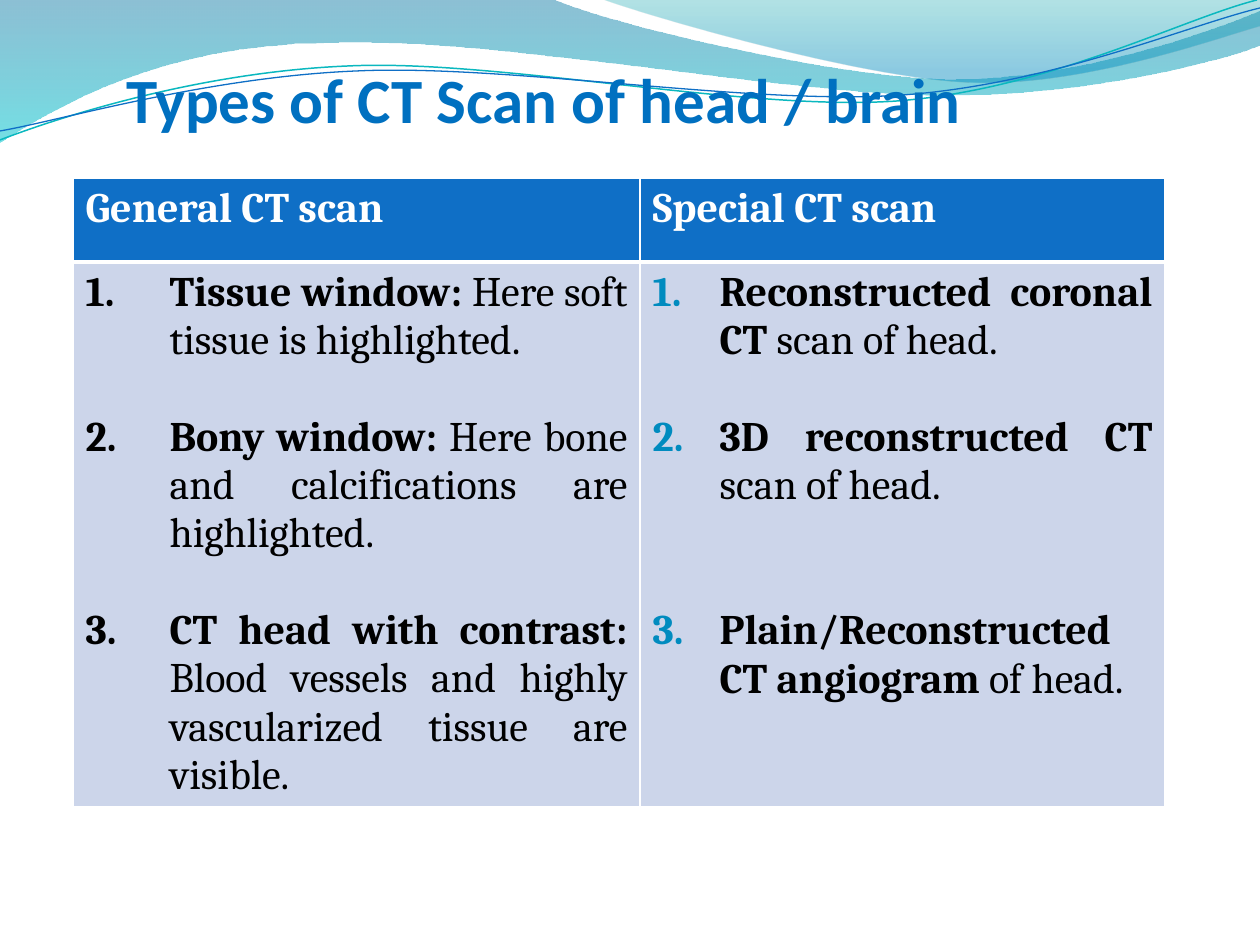
import pptx
import pptx.util
import pptx.dml.color
import pptx.enum.text
import pptx.oxml
import pptx.oxml.ns

SCALE = 914400 / 126
BODY_FONT = "Cambria"
LINE_GAP = 27.7


def px(length):
    return pptx.util.Emu(round(length * SCALE))


def colour(value):
    return pptx.dml.color.RGBColor.from_string(value)


def element(markup):
    tag, rest = (markup + " ").split(" ", 1)
    space = pptx.oxml.ns.nsdecls("a")
    return pptx.oxml.parse_xml(f"<a:{tag} {space} {rest}/>")


def add_text(para, text, size=24, font=BODY_FONT, fill="000000", bold=False):
    span = para.add_run()
    span.text = text
    span.font.size = pptx.util.Pt(size)
    span.font.name = font
    span.font.bold = bold
    span.font.color.rgb = colour(fill)


class SlideBuilder:
    accent = "0F6FC6"
    title_colour = "0070C0"
    cell_colour = "CCD5EA"
    border_colour = "FFFFFF"

    def __init__(self, deck):
        self.page = deck.slides.add_slide(deck.slide_layouts[5])

    def outline(self, start, steps, close):
        points = [step[i:i + 2] for step in steps for i in range(0, len(step), 2)]
        builder = self.page.shapes.build_freeform(*map(px, start), scale=1.0)
        builder.add_line_segments([(px(x), px(y)) for x, y in points], close=close)
        shape = builder.convert_to_shape()
        shape.shadow.inherit = False
        segments = iter(list(shape.element.spPr.iter(pptx.oxml.ns.qn("a:lnTo"))))
        for step in steps:
            parts = [next(segments) for _ in range(len(step) // 2)]
            if len(parts) == 3:
                bend = element("cubicBezTo")
                parts[0].addprevious(bend)
                for part in parts:
                    bend.append(part[0])
                    part.getparent().remove(part)
        return shape

    def wave(self, start, steps, stops):
        shape = self.outline(start, steps, True)
        shape.line.fill.background()
        shape.fill.gradient()
        shape.fill.gradient_angle = 270
        for stop, (position, value, _) in zip(shape.fill.gradient_stops, stops):
            stop.position = position
            stop.color.rgb = colour(value)
        tints = shape.element.spPr.iter(pptx.oxml.ns.qn("a:srgbClr"))
        for tint, (_, _, opacity) in zip(tints, stops):
            tint.append(element(f'alpha val="{opacity * 1000}"'))

    def curve(self, start, steps, value, width):
        shape = self.outline(start, steps, False)
        shape.fill.background()
        shape.line.color.rgb = colour(value)
        shape.line.width = pptx.util.Pt(width)

    def title(self, text, left, top, width, height):
        box = self.page.shapes.title
        self.page.shapes.element.append(box.element)
        box.left, box.top, box.width, box.height = map(px, (left, top, width, height))
        frame = box.text_frame
        frame.word_wrap = True
        frame.auto_size = pptx.enum.text.MSO_AUTO_SIZE.NONE
        frame.vertical_anchor = pptx.enum.text.MSO_ANCHOR.BOTTOM
        frame.margin_left = frame.margin_right = frame.margin_bottom = 0
        frame.margin_top = px(6)
        para = frame.paragraphs[0]
        para.alignment = pptx.enum.text.PP_ALIGN.LEFT
        add_text(para, text, size=36, font="Calibri", fill=self.title_colour, bold=True)

    def style_cell(self, cell, fill, **widths):
        cell.fill.solid()
        cell.fill.fore_color.rgb = colour(fill)
        properties = cell._tc.get_or_add_tcPr()
        for index, side in enumerate("LRTB"):
            width = pptx.util.Pt(widths.get(side, 1))
            border = element(f'ln{side} w="{width}"')
            paint = element("solidFill")
            paint.append(element(f'srgbClr val="{self.border_colour}"'))
            border.append(paint)
            properties.insert(index, border)

    def numbered_list(self, frame, items, indent, number_colour):
        for index, (lead, rest, gap_lines) in enumerate(items):
            para = frame.add_paragraph() if index else frame.paragraphs[0]
            para.alignment = pptx.enum.text.PP_ALIGN.JUSTIFY
            if gap_lines:
                para.space_before = pptx.util.Pt(gap_lines * LINE_GAP)
            properties = para._p.get_or_add_pPr()
            properties.set("marL", str(px(indent)))
            properties.set("indent", str(px(-indent)))
            if number_colour:
                paint = element("buClr")
                paint.append(element(f'srgbClr val="{number_colour}"'))
                properties.append(paint)
            properties.append(element('buFont typeface="+mj-lt"'))
            properties.append(element('buAutoNum type="arabicPeriod"'))
            add_text(para, lead, bold=True)
            add_text(para, rest)

    def table(self, left, top, height, row_heights, columns):
        width = sum(column["width"] for column in columns)
        holder = self.page.shapes.add_table(
            2, len(columns), *map(px, (left, top, width, height)))
        table = holder.table
        table.horz_banding = False
        for row, row_height in zip(table.rows, row_heights):
            row.height = px(row_height)
        for index, column in enumerate(columns):
            table.columns[index].width = px(column["width"])
            header, body = table.cell(0, index), table.cell(1, index)
            self.style_cell(header, self.accent, B=3)
            self.style_cell(body, self.cell_colour, T=3)
            add_text(header.text_frame.paragraphs[0], column["heading"],
                     fill="FFFFFF", bold=True)
            self.numbered_list(body.text_frame, column["items"],
                               column["indent"], column["number_colour"])
        holder.height = px(height)


def main():
    deck = pptx.Presentation()
    deck.slide_width, deck.slide_height = px(1260), px(945)
    slide = SlideBuilder(deck)
    slide.wave((0, 0), [
        (554, 0), (600, 21, 837, 79, 955, 79), (1075, 79, 1207, 33, 1260, 11),
        (1260, 45), (1239, 55, 1096, 96, 940, 95), (784, 95, 481, 35, 324, 43),
        (163, 45, 58, 105, 0, 142), (0, 0),
    ], [(0, "0074A1", 45), (1, "00C6CF", 55)])
    slide.wave((604, 0), [
        (641, 14, 859, 78, 969, 82), (1079, 87, 1211, 40, 1260, 26), (1260, 0),
        (604, 0),
    ], [(0, "00A1A9", 30), (0.8, "008BBF", 45)])
    slide.curve((0, 140), [
        (60, 117, 199, 72, 349, 66), (498, 59, 747, 112, 898, 101),
        (1050, 89, 1182, 19, 1257, 0),
    ], "0AB8BF", 0.85)
    slide.curve((0, 131), [
        (59, 121, 207, 77, 357, 71), (508, 64, 752, 106, 903, 95),
        (1053, 84, 1186, 26, 1260, 8),
    ], slide.accent, 0.75)
    slide.title("Types of CT Scan of head / brain", 126, 38, 924, 98)
    general = [
        ("Tissue window: ", "Here soft tissue is highlighted.", 0),
        ("Bony window: ", "Here bone and calcifications are highlighted.", 1),
        ("CT head with contrast: ",
         "Blood vessels and highly vascularized tissue are visible.", 1),
    ]
    special = [
        ("Reconstructed coronal CT ", "scan of head.", 0),
        ("3D reconstructed CT ", "scan of head.", 1),
        ("Plain/Reconstructed CT angiogram", " of head.", 2),
    ]
    slide.table(73, 178, 651, (84, 470), [
        dict(heading="General CT scan", width=567, items=general,
             indent=84, number_colour=None),
        dict(heading="Special CT scan", width=525, items=special,
             indent=67, number_colour="008BBF"),
    ])
    deck.save("out.pptx")


if __name__ == "__main__":
    main()
